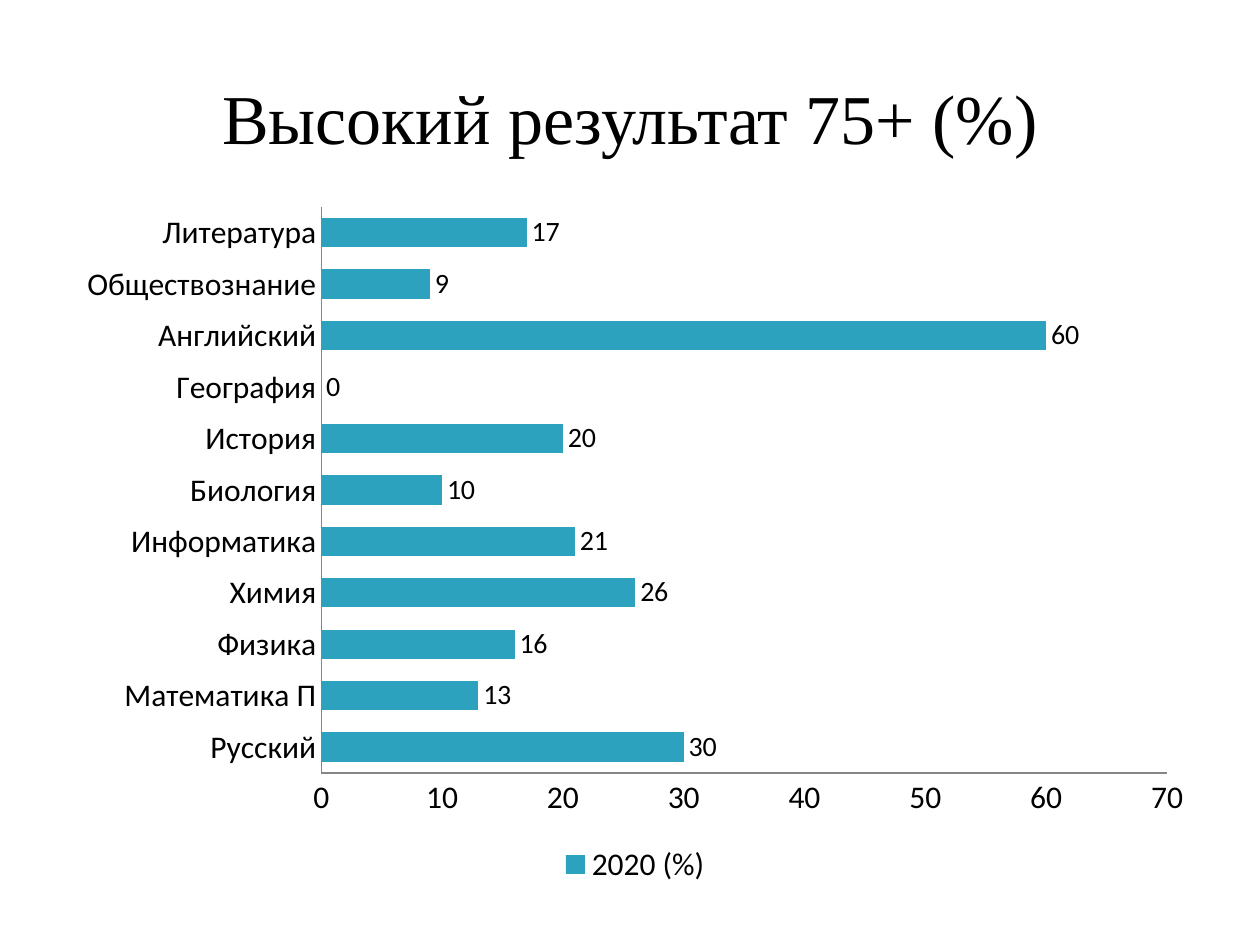
"""Build a slide with a bar chart of high exam results by subject."""
from pptx import Presentation
from pptx.chart.data import CategoryChartData
from pptx.dml.color import RGBColor
from pptx.enum.chart import XL_CHART_TYPE as ChartType, XL_LABEL_POSITION as LabelPos
from pptx.enum.chart import XL_LEGEND_POSITION as LegendPos, XL_TICK_MARK as Tick
from pptx.enum.text import MSO_ANCHOR as Anchor, PP_ALIGN as Align
from pptx.util import Cm, Pt

RESULTS = {
    "Русский": 30,
    "Математика П": 13,
    "Физика": 16,
    "Химия": 26,
    "Информатика": 21,
    "Биология": 10,
    "История": 20,
    "География": 0,
    "Английский": 60,
    "Обществознание": 9,
    "Литература": 17,
}


def rgb(value):
    return RGBColor.from_string(value)


def format_font(font, name="Calibri", size=18, color="000000", bold=False):
    font.name = name
    font.size = Pt(size)
    font.bold = bold
    font.color.rgb = rgb(color)


class SlideBuilder:
    bar_color = "2DA2BF"
    axis_color = "868686"

    def __init__(self, prs):
        self.s = prs.slides.add_slide(prs.slide_layouts[5])

    def title(self, text, left, top, width, height, **style):
        sp = self.s.shapes.title
        sp.left, sp.top, sp.width, sp.height = map(Cm, (left, top, width, height))
        tf = sp.text_frame
        tf.word_wrap = True
        tf.vertical_anchor = Anchor.MIDDLE
        p = tf.paragraphs[0]
        p.alignment = Align.CENTER
        r = p.add_run()
        r.text = text
        format_font(r.font, **style)

    def bar_chart(self, name, results, left, top, width, height):
        data = CategoryChartData(number_format="0")
        data.categories = list(results)
        data.add_series(name, list(results.values()))
        box = map(Cm, (left, top, width, height))
        chart = self.s.shapes.add_chart(ChartType.BAR_CLUSTERED, *box, data).chart
        format_font(chart.font)
        chart.has_title = False
        chart.has_legend = True
        chart.legend.position = LegendPos.BOTTOM
        chart.legend.include_in_layout = False
        for axis in (chart.category_axis, chart.value_axis):
            axis.has_major_gridlines = False
            axis.major_tick_mark = axis.minor_tick_mark = Tick.NONE
            axis.format.line.color.rgb = rgb(self.axis_color)
            axis.format.line.width = Pt(0.75)
        plot = chart.plots[0]
        plot.gap_width = 75
        plot.vary_by_categories = False
        fill = plot.series[0].format.fill
        fill.solid()
        fill.fore_color.rgb = rgb(self.bar_color)
        labels = plot.series[0].data_labels
        labels.show_value = True
        labels.position = LabelPos.OUTSIDE_END
        labels.number_format = "0"
        labels.number_format_is_linked = False
        format_font(labels.font, size=16)


def main():
    prs = Presentation()
    prs.slide_width, prs.slide_height = Cm(25.4), Cm(19.05)
    slide = SlideBuilder(prs)
    slide.title("Высокий результат 75+ (%)", 1.27, 0.76, 22.86, 3.18,
                name="Times New Roman", size=40)
    slide.bar_chart("2020 (%)", RESULTS, 1.3, 3.89, 23.01, 14.05)
    prs.save("out.pptx")


if __name__ == "__main__":
    main()
